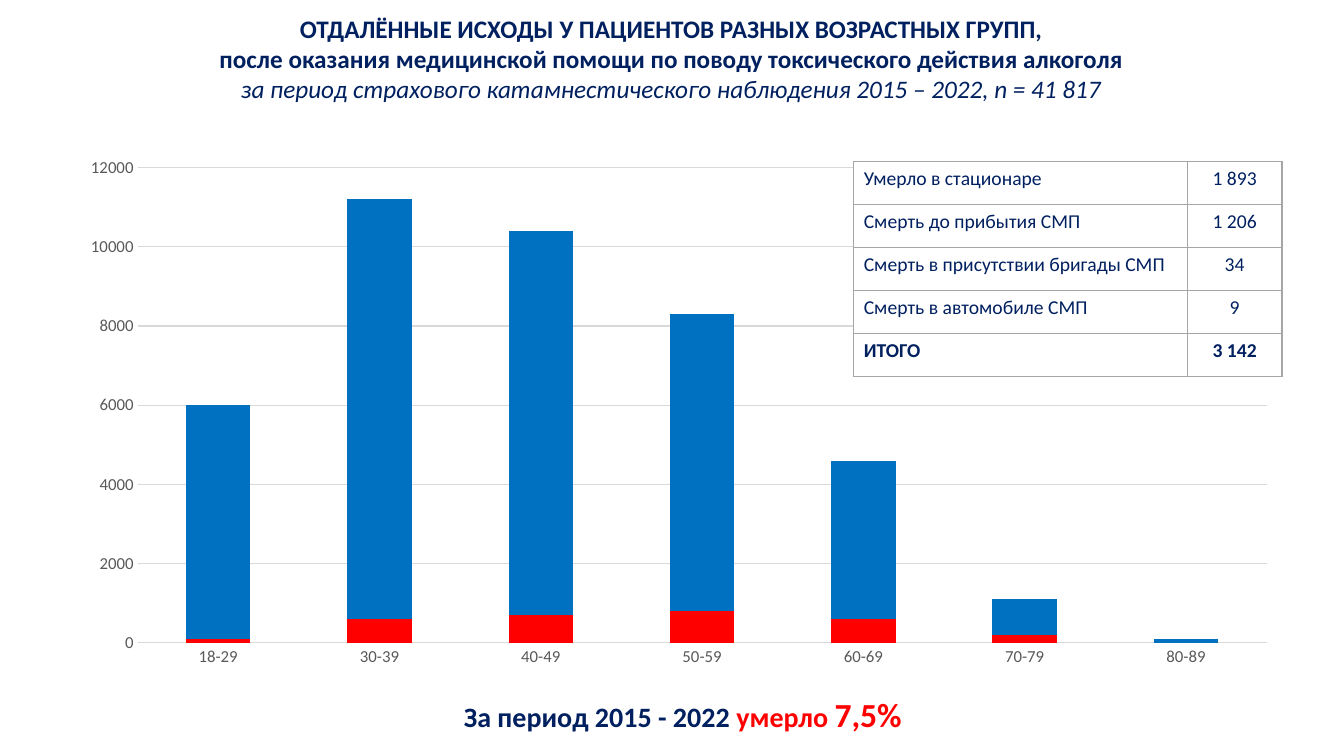
from dataclasses import dataclass

from lxml import etree
from pptx import Presentation
from pptx.chart.data import CategoryChartData
from pptx.dml.color import RGBColor
from pptx.enum.chart import XL_CHART_TYPE, XL_TICK_MARK
from pptx.enum.text import MSO_ANCHOR, PP_ALIGN
from pptx.oxml import parse_xml
from pptx.oxml.ns import nsdecls, qn
from pptx.util import Pt


@dataclass(frozen=True)
class Theme:
    font: str = "Calibri"
    navy: RGBColor = RGBColor(0x00, 0x20, 0x60)
    red: RGBColor = RGBColor(0xFF, 0x00, 0x00)
    blue: RGBColor = RGBColor(0x00, 0x70, 0xC0)
    white: RGBColor = RGBColor(0xFF, 0xFF, 0xFF)
    axis_text: RGBColor = RGBColor(0x59, 0x59, 0x59)
    grid: RGBColor = RGBColor(0xD9, 0xD9, 0xD9)
    border: str = "A6A6A6"
    title_size: int = 18
    table_size: int = 14
    axis_size: int = 12
    summary_size: int = 20
    percent_size: int = 24


THEME = Theme()

TITLE = [
    ("ОТДАЛЁННЫЕ ИСХОДЫ У ПАЦИЕНТОВ РАЗНЫХ ВОЗРАСТНЫХ ГРУПП,", True),
    ("после оказания медицинской помощи по поводу токсического действия алкоголя", True),
    ("за период страхового катамнестического наблюдения 2015 – 2022, n = 41 817", False),
]
AGES = ["18-29", "30-39", "40-49", "50-59", "60-69", "70-79", "80-89"]
SERIES = [
    ("Умерло", [100, 600, 700, 800, 600, 200, 0], THEME.red),
    ("Остальные", [5900, 10600, 9700, 7500, 4000, 900, 100], THEME.blue),
]
DEATHS = [
    ("Умерло в стационаре", "1 893"),
    ("Смерть до прибытия СМП", "1 206"),
    ("Смерть в присутствии бригады СМП", "34"),
    ("Смерть в автомобиле СМП", "9"),
    ("ИТОГО", "3 142"),
]
SUMMARY = [
    ("За период 2015 - 2022 ", THEME.navy, THEME.summary_size),
    ("умерло ", THEME.red, THEME.summary_size),
    ("7,5%", THEME.red, THEME.percent_size),
]


def style_font(font, size, color, bold=False, italic=False):
    font.name = THEME.font
    font.size = Pt(size)
    font.color.rgb = color
    font.bold = bold
    font.italic = italic


def add_title(slide):
    title = slide.shapes.title
    title.left, title.top, title.width, title.height = Pt(45.5), Pt(5.8), Pt(868), Pt(73)
    frame = title.text_frame
    frame.vertical_anchor = MSO_ANCHOR.TOP
    frame.text = "\n".join(line for line, _ in TITLE)
    for paragraph, (_, bold) in zip(frame.paragraphs, TITLE):
        paragraph.alignment = PP_ALIGN.CENTER
        style_font(paragraph.font, THEME.title_size, THEME.navy, bold, italic=not bold)


def set_plot_area(chart, **fractions):
    """Fix the inner plot area as x, y, w, h fractions of the chart."""
    plot_area = chart._chartSpace.chart.plotArea
    for old in plot_area.findall(qn("c:layout")):
        plot_area.remove(old)
    layout = parse_xml(f"<c:layout {nsdecls('c')}><c:manualLayout/></c:layout>")
    settings = {"layoutTarget": "inner", "xMode": "edge", "yMode": "edge", **fractions}
    for tag, value in settings.items():
        etree.SubElement(layout[0], qn(f"c:{tag}")).set("val", str(value))
    plot_area.insert(0, layout)


def add_age_chart(slide):
    data = CategoryChartData()
    data.categories = AGES
    for name, values, _ in SERIES:
        data.add_series(name, values)
    chart = slide.shapes.add_chart(
        XL_CHART_TYPE.COLUMN_STACKED, Pt(47.5), Pt(105.8), Pt(874.8), Pt(378.7), data
    ).chart
    chart.has_title = False
    chart.has_legend = False
    style_font(chart.font, THEME.axis_size, THEME.axis_text)

    plot = chart.plots[0]
    plot.gap_width, plot.overlap, plot.vary_by_categories = 150, 100, False
    for series, (_, _, color) in zip(plot.series, SERIES):
        series.format.fill.solid()
        series.format.fill.fore_color.rgb = color

    ages, patients = chart.category_axis, chart.value_axis
    for axis in (ages, patients):
        axis.major_tick_mark = axis.minor_tick_mark = XL_TICK_MARK.NONE
        style_font(axis.tick_labels.font, THEME.axis_size, THEME.axis_text)
    patients.minimum_scale, patients.maximum_scale, patients.major_unit = 0, 12000, 2000
    patients.format.line.fill.background()
    for line in (ages.format.line, patients.major_gridlines.format.line):
        line.color.rgb = THEME.grid
        line.width = Pt(0.75)
    set_plot_area(chart, x=0.058, y=0.037, w=0.922, h=0.896)


def set_borders(cell):
    properties = cell._tc.get_or_add_tcPr()
    for position, side in enumerate(("lnL", "lnR", "lnT", "lnB")):
        properties.insert(position, parse_xml(
            f'<a:{side} {nsdecls("a")} w="{Pt(1)}"><a:solidFill>'
            f'<a:srgbClr val="{THEME.border}"/></a:solidFill></a:{side}>'
        ))


def add_deaths_table(slide):
    row_height = Pt(30.7)
    table = slide.shapes.add_table(
        len(DEATHS), 2, Pt(609.8), Pt(115.5), Pt(306), row_height * len(DEATHS)
    ).table
    table.columns[0].width, table.columns[1].width = Pt(238.3), Pt(67.7)
    for row, texts in zip(table.rows, DEATHS):
        row.height = row_height
        for cell, text, alignment in zip(row.cells, texts, (PP_ALIGN.LEFT, PP_ALIGN.CENTER)):
            cell.text = text
            cell.fill.solid()
            cell.fill.fore_color.rgb = THEME.white
            set_borders(cell)
            paragraph = cell.text_frame.paragraphs[0]
            paragraph.alignment = alignment
            style_font(paragraph.font, THEME.table_size, THEME.navy, bold=texts == DEATHS[-1])


def add_summary(slide):
    frame = slide.shapes.add_textbox(Pt(65.5), Pt(491.8), Pt(844.5), Pt(36)).text_frame
    frame.word_wrap = True
    paragraph = frame.paragraphs[0]
    paragraph.alignment = PP_ALIGN.CENTER
    for text, color, size in SUMMARY:
        run = paragraph.add_run()
        run.text = text
        style_font(run.font, size, color, bold=True)


def main():
    presentation = Presentation()
    presentation.slide_width, presentation.slide_height = Pt(960), Pt(540)
    slide = presentation.slides.add_slide(presentation.slide_layouts.get_by_name("Title Only"))
    add_age_chart(slide)
    add_deaths_table(slide)
    add_summary(slide)
    add_title(slide)
    presentation.save("out.pptx")


if __name__ == "__main__":
    main()
